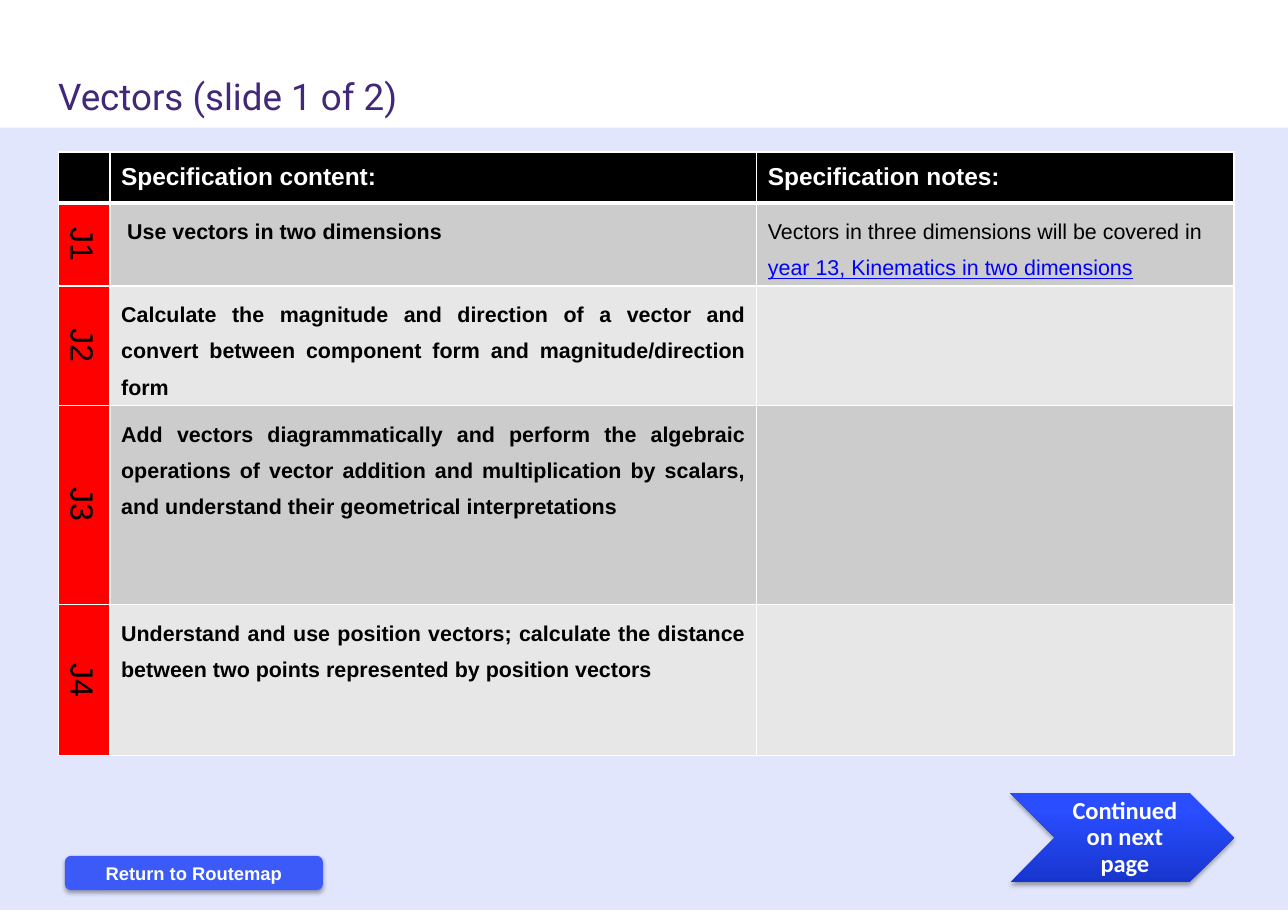
import pptx
import pptx.dml.color
import pptx.enum.shapes
import pptx.enum.text
import pptx.oxml
import pptx.oxml.ns
import pptx.util

Inches = pptx.util.Inches
Pt = pptx.util.Pt
ALIGN = pptx.enum.text.PP_ALIGN
ANCHOR = pptx.enum.text.MSO_ANCHOR
SHAPE = pptx.enum.shapes.MSO_SHAPE
NS = pptx.oxml.ns.nsdecls("a")
qn = pptx.oxml.ns.qn

COLORS = {
    "white": "FFFFFF", "black": "000000", "blue": "3B5AF7", "title": "412878",
    "code": "FF0000", "odd": "CCCCCC", "even": "E7E7E7", "link": "0000FF",
    "deep": "1735CD", "bright": "294DFF", "top": "2B4EFF",
}
HEADINGS = ["", "Specification content:", "Specification notes:"]
TOPICS = [
    ("J1", " Use vectors in two dimensions"),
    ("J2", "Calculate the magnitude and direction of a vector and convert between "
           "component form and magnitude/direction form"),
    ("J3", "Add vectors diagrammatically and perform the algebraic operations of vector "
           "addition and multiplication by scalars, and understand their geometrical "
           "interpretations"),
    ("J4", "Understand and use position vectors; calculate the distance between two "
           "points represented by position vectors"),
]
COLUMN_WIDTHS = [0.47, 5.87, 4.33]
ROW_HEIGHTS = [0.46, 0.65, 0.98, 1.81, 1.37]


def rgb(name):
    return pptx.dml.color.RGBColor.from_string(COLORS[name])


def inches(box):
    return [Inches(length) for length in box]


def add_run(paragraph, text, size, color, bold=False, font="Arial"):
    run = paragraph.add_run()
    run.text = text
    run.font.size = Pt(size)
    run.font.name = font
    run.font.bold = bold
    run.font.color.rgb = rgb(color)
    return run


def add_block(slide, kind, box, color):
    block = slide.shapes.add_shape(kind, *inches(box))
    block.shadow.inherit = False
    block.fill.solid()
    block.fill.fore_color.rgb = rgb(color)
    block.line.fill.background()
    return block


def add_shadow(block):
    effects = block.element.spPr.find(qn("a:effectLst"))
    effects.append(pptx.oxml.parse_xml(
        f'<a:outerShdw {NS} blurRad="{Pt(3.1)}" dist="{Pt(1.8)}" dir="5400000" '
        'rotWithShape="0"><a:srgbClr val="000000"><a:alpha val="35000"/>'
        '</a:srgbClr></a:outerShdw>'))


def add_backdrop(slide, box):
    backdrop = add_block(slide, SHAPE.RECTANGLE, box, "blue")
    tint = backdrop.element.spPr.find(qn("a:solidFill"))[0]
    tint.append(pptx.oxml.parse_xml(f'<a:alpha {NS} val="15000"/>'))


def add_title(slide, box):
    title = slide.shapes.add_textbox(*inches(box)).text_frame
    title.word_wrap = True
    add_run(title.paragraphs[0], "Vectors (slide 1 of 2)", 24, "title", font="Roboto")


def add_return_button(slide, box):
    button = add_block(slide, SHAPE.ROUNDED_RECTANGLE, box, "blue")
    add_shadow(button)
    button.text_frame.vertical_anchor = ANCHOR.MIDDLE
    label = button.text_frame.paragraphs[0]
    label.alignment = ALIGN.CENTER
    add_run(label, "Return to Routemap", 12, "white", True)


def style_cell(cell, color, top=1, bottom=1):
    properties = cell._tc.get_or_add_tcPr()
    for side, width in zip("LRTB", (1, 1, top, bottom)):
        properties.append(pptx.oxml.parse_xml(
            f'<a:ln{side} {NS} w="{Pt(width)}"><a:solidFill>'
            f'<a:srgbClr val="{COLORS["white"]}"/></a:solidFill></a:ln{side}>'))
    cell.fill.solid()
    cell.fill.fore_color.rgb = rgb(color)


def add_specification(slide, box):
    table = slide.shapes.add_table(
        len(ROW_HEIGHTS), len(COLUMN_WIDTHS), *inches(box)).table
    table.horz_banding = False
    for column, width in zip(table.columns, COLUMN_WIDTHS):
        column.width = Inches(width)
    for row, height in zip(table.rows, ROW_HEIGHTS):
        row.height = Inches(height)

    for column, heading in enumerate(HEADINGS):
        cell = table.cell(0, column)
        style_cell(cell, "black", bottom=3)
        cell.vertical_anchor = ANCHOR.MIDDLE
        if heading:
            add_run(cell.text_frame.paragraphs[0], heading, 16, "white", True)

    for row, (code, content) in enumerate(TOPICS, 1):
        band = "odd" if row % 2 else "even"
        for column, color in enumerate(("code", band, band)):
            style_cell(table.cell(row, column), color, top=3 if row == 1 else 1)
        code_cell = table.cell(row, 0)
        code_cell._tc.get_or_add_tcPr().set("vert", "vert")
        code_line = code_cell.text_frame.paragraphs[0]
        code_line.alignment = ALIGN.CENTER
        add_run(code_line, code, 21, "black")
        content_line = table.cell(row, 1).text_frame.paragraphs[0]
        content_line.alignment = ALIGN.JUSTIFY
        content_line.line_spacing = 1.5
        add_run(content_line, content, 14, "black", True)

    note = table.cell(1, 2).text_frame.paragraphs[0]
    note.line_spacing = 1.5
    add_run(note, "Vectors in three dimensions will be covered in ", 14, "black")
    reference = add_run(note, "year 13, Kinematics in two dimensions", 14, "link")
    reference.font.underline = True


def add_continuation(slide, box):
    left, top, width, height = box
    arrow = add_block(slide, SHAPE.CHEVRON, box, "bright")
    add_shadow(arrow)
    stops = "".join(
        f'<a:gs pos="{position}000"><a:srgbClr val="{COLORS[name]}"/></a:gs>'
        for position, name in ((0, "deep"), (80, "bright"), (100, "top")))
    properties = arrow.element.spPr
    properties.replace(properties.find(qn("a:solidFill")), pptx.oxml.parse_xml(
        f'<a:gradFill {NS} rotWithShape="1"><a:gsLst>{stops}</a:gsLst>'
        '<a:lin ang="16200000" scaled="0"/></a:gradFill>'))

    caption = slide.shapes.add_textbox(
        *inches((left + height / 2, top, width - height, height))).text_frame
    caption.word_wrap = True
    caption.vertical_anchor = ANCHOR.MIDDLE
    caption.margin_left = Inches(0.07)
    caption.margin_top = caption.margin_right = caption.margin_bottom = Inches(0.02)
    line = caption.paragraphs[0]
    line.alignment = ALIGN.CENTER
    line.line_spacing = 0.9
    add_run(line, "Continued on next page", 16, "white", True, "Calibri")


def main():
    deck = pptx.Presentation()
    deck.slide_width = Inches(11.69)
    deck.slide_height = Inches(8.27)
    slide = deck.slides.add_slide(deck.slide_layouts[6])
    add_backdrop(slide, (0, 1.16, 11.69, 7.1))
    add_return_button(slide, (0.59, 7.77, 2.34, 0.31))
    add_specification(slide, (0.53, 1.38, sum(COLUMN_WIDTHS), sum(ROW_HEIGHTS)))
    add_title(slide, (0.43, 0.62, 5.12, 0.5))
    add_continuation(slide, (9.17, 7.2, 2.03, 0.81))
    deck.save("out.pptx")


if __name__ == "__main__":
    main()
